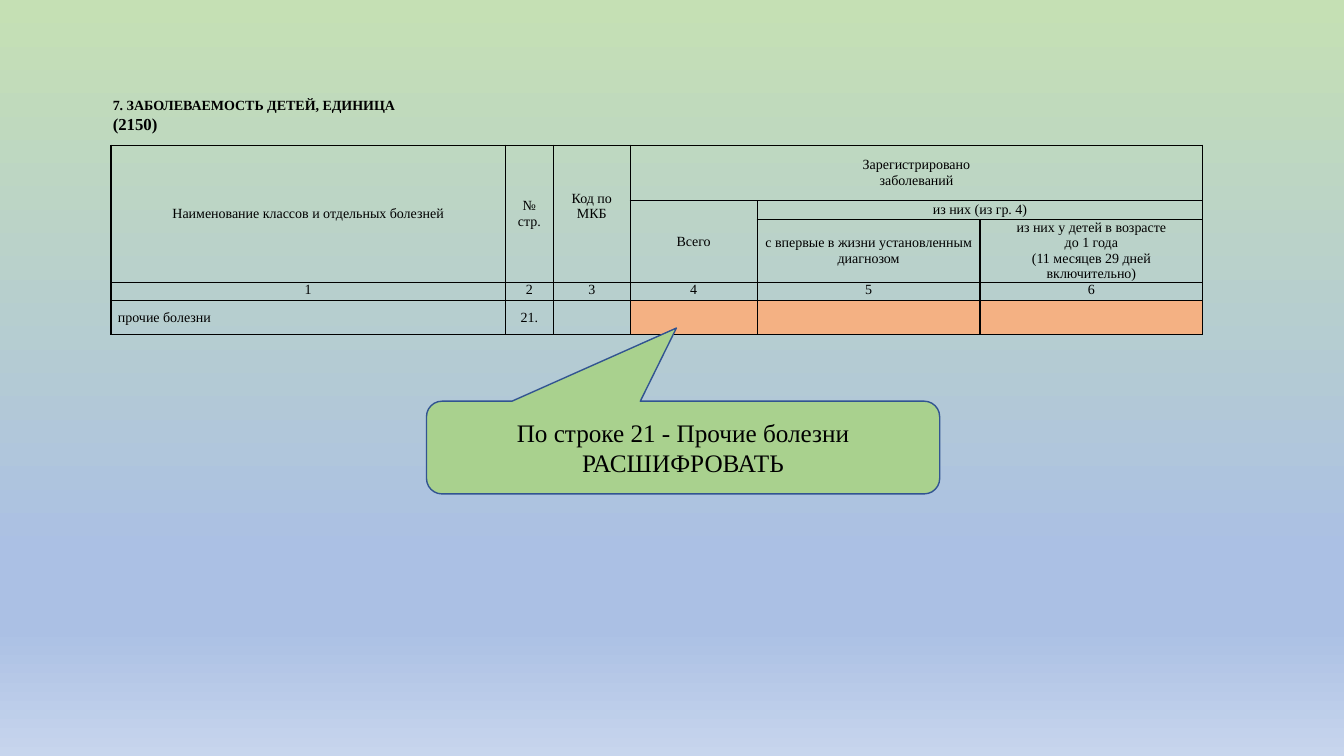
import pptx
import pptx.dml.color
import pptx.enum.shapes
import pptx.enum.text
import pptx.oxml
import pptx.oxml.ns
import pptx.util
from lxml import etree

RGB = pptx.dml.color.RGBColor
BLACK = RGB(0x00, 0x00, 0x00)
ORANGE = RGB(0xF4, 0xB1, 0x83)
GREEN = RGB(0xA9, 0xD1, 0x8E)
NAVY = RGB(0x32, 0x54, 0x91)
SKY_TOP = RGB(0xC5, 0xE0, 0xB4)
SKY_MID = RGB(0xAB, 0xC0, 0xE4)
SKY_END = RGB(0xC7, 0xD5, 0xED)
FONT = "Times New Roman"
COLS = [3.91, 0.48, 0.76, 1.26, 2.21, 2.21]
ROWS = [0.55, 0.19, 0.62, 0.18, 0.34]
HEADERS = [
    (0, 0, 2, 0, ["Наименование классов и отдельных болезней"]),
    (0, 1, 2, 1, ["№", "стр."]),
    (0, 2, 2, 2, ["Код по", "МКБ"]),
    (0, 3, 0, 5, ["Зарегистрировано", "заболеваний"]),
    (1, 3, 2, 3, ["Всего"]),
    (1, 4, 1, 5, ["из них (из гр. 4)"]),
    (2, 4, 2, 4, ["с впервые в жизни установленным диагнозом"]),
    (2, 5, 2, 5, ["из них у детей в возрасте", "до 1 года",
                  "(11 месяцев 29 дней включительно)"]),
]
ALIGN = pptx.enum.text.PP_ALIGN
ANCHOR = pptx.enum.text.MSO_ANCHOR
Inches = pptx.util.Inches
Pt = pptx.util.Pt


def write(tf, lines, size=10, bold=False, align=ALIGN.CENTER):
    """Fill a text frame with one paragraph per line."""
    for i, line in enumerate(lines):
        p = tf.paragraphs[0] if i == 0 else tf.add_paragraph()
        p.alignment = align
        r = p.add_run()
        r.text = line
        r.font.name, r.font.size, r.font.bold = FONT, Pt(size), bold
        r.font.color.rgb = BLACK


def paint_background(slide):
    """Paint the vertical four-stop gradient."""
    fill = slide.background.fill
    fill.gradient()
    fill.gradient_angle = 270
    stops = slide.element.find(".//" + pptx.oxml.ns.qn("a:gsLst"))
    for gs in list(stops):
        stops.remove(gs)
    for pos, color in [(0, SKY_TOP), (74, SKY_MID), (83, SKY_MID), (100, SKY_END)]:
        gs = etree.SubElement(stops, pptx.oxml.ns.qn("a:gs"), pos=str(pos * 1000))
        etree.SubElement(gs, pptx.oxml.ns.qn("a:srgbClr"), val=str(color))


def add_heading(slide, x, y, w, h):
    """Place the section title and the table code."""
    tf = slide.shapes.add_textbox(*map(Inches, (x, y, w, h))).text_frame
    tf.word_wrap = True
    tf.vertical_anchor = ANCHOR.MIDDLE
    write(tf, ["7. ЗАБОЛЕВАЕМОСТЬ ДЕТЕЙ, ЕДИНИЦА", "(2150)"], bold=True, align=ALIGN.JUSTIFY)
    tf.paragraphs[1].runs[0].font.size = Pt(12)


def format_cell(cell):
    """Give a cell its margins, clear fill and thin black borders."""
    cell.margin_left = cell.margin_right = Inches(0.07)
    cell.margin_top = cell.margin_bottom = 0
    cell.vertical_anchor = ANCHOR.MIDDLE
    cell.fill.background()
    tcPr = cell._tc.get_or_add_tcPr()
    for i, side in enumerate("LRTB"):
        tcPr.insert(i, pptx.oxml.parse_xml(
            f'<a:ln{side} {pptx.oxml.ns.nsdecls("a")} w="12700"><a:solidFill>'
            f'<a:srgbClr val="{BLACK}"/></a:solidFill></a:ln{side}>'))


def add_disease_table(slide, x, y):
    """Place the table with its merged header, column numbers and data row."""
    table = slide.shapes.add_table(len(ROWS), len(COLS), *map(
        Inches, (x, y, sum(COLS), sum(ROWS)))).table
    table.first_row = table.horz_banding = False
    for col, width in zip(table.columns, COLS):
        col.width = Inches(width)
    for row, height in zip(table.rows, ROWS):
        row.height = Inches(height)
    for cell in table.iter_cells():
        format_cell(cell)
    for top, left, bottom, right, lines in HEADERS:
        cell = table.cell(top, left)
        if (top, left) != (bottom, right):
            cell.merge(table.cell(bottom, right))
        write(cell.text_frame, lines)
    table.cell(0, 2).margin_bottom = Inches(0.15)
    for c in range(len(COLS)):
        cell = table.cell(3, c)
        cell.vertical_anchor = ANCHOR.TOP
        write(cell.text_frame, [str(c + 1)])
    write(table.cell(4, 0).text_frame, ["прочие болезни"], align=ALIGN.LEFT)
    write(table.cell(4, 1).text_frame, ["21."])
    for c in range(3, len(COLS)):
        fill = table.cell(4, c).fill
        fill.solid()
        fill.fore_color.rgb = ORANGE


def add_callout(slide, x, y, w, h):
    """Place the callout that points at the data row."""
    sp = slide.shapes.add_shape(
        pptx.enum.shapes.MSO_SHAPE.ROUNDED_RECTANGULAR_CALLOUT, *map(Inches, (x, y, w, h)))
    for i, value in enumerate([-0.013, -1.289, 0.167]):
        sp.adjustments[i] = value
    sp.shadow.inherit = False
    sp.fill.solid()
    sp.fill.fore_color.rgb = GREEN
    sp.line.color.rgb = NAVY
    sp.line.width = Pt(1)
    tf = sp.text_frame
    tf.word_wrap = True
    tf.vertical_anchor = ANCHOR.MIDDLE
    write(tf, ["По строке 21 - Прочие болезни РАСШИФРОВАТЬ"], size=18)


def main():
    """Build and save the slide."""
    prs = pptx.Presentation()
    prs.slide_width, prs.slide_height = Inches(13.33), Inches(7.5)
    slide = prs.slides.add_slide(prs.slide_layouts[6])
    paint_background(slide)
    add_disease_table(slide, 1.1, 1.44)
    add_heading(slide, 1.02, 0.91, 11.75, 0.47)
    add_callout(slide, 4.23, 3.98, 5.09, 0.92)
    prs.save("out.pptx")


if __name__ == "__main__":
    main()
